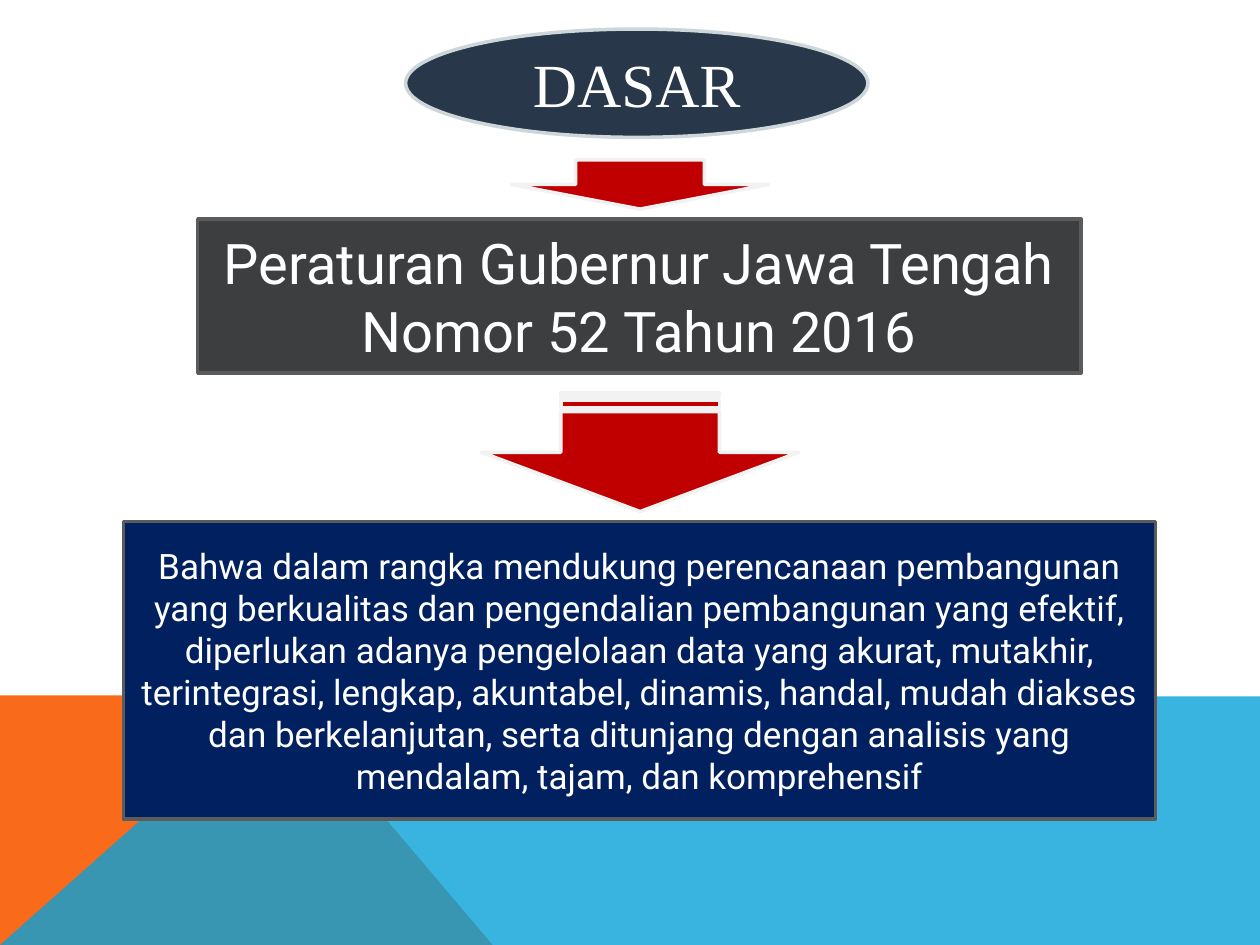
from lxml.etree import SubElement
from pptx import Presentation
from pptx.dml.color import RGBColor
from pptx.enum.shapes import MSO_SHAPE as SHAPE
from pptx.enum.text import MSO_ANCHOR as ANCHOR, PP_ALIGN as ALIGN
from pptx.oxml.ns import qn
from pptx.util import Pt

WIDTH, HEIGHT = 720, 540
RED, PALE, GREY = "C00000", "F2F2F2", "5A5B5D"

# Background bands: corner points, colour, opacity in percent
BANDS = [
    ([(0, 540), (0, 397.4), (160.6, 397.4), (281.5, 540)], "F96A1B", 100),
    ([(0, 540), (160.6, 397.4), (720, 398), (720, 540)], "08A1D9", 80),
]

# Boxes: shape, (left, top, width, height), fill, line, text, text format
BOXES = [
    (SHAPE.RECTANGLE, (113, 125.3, 504.7, 87.8), "3C3E3F", GREY,
     "Peraturan Gubernur Jawa Tengah Nomor 52 Tahun 2016",
     dict(size=32, font="Roboto")),
    (SHAPE.RECTANGLE, (70.6, 298.1, 589.7, 169.9), "002060", GREY,
     "Bahwa dalam rangka mendukung perencanaan pembangunan yang berkualitas "
     "dan pengendalian pembangunan yang efektif, diperlukan adanya pengelolaan "
     "data yang akurat, mutakhir, terintegrasi, lengkap, akuntabel, dinamis, "
     "handal, mudah diakses dan berkelanjutan, serta ditunjang dengan analisis "
     "yang mendalam, tajam, dan komprehensif",
     dict(size=20, font="Roboto")),
    (SHAPE.OVAL, (231.8, 16.6, 264.2, 61.9), "28374A", "CDD7D9",
     "DASAR", dict(size=35, font="Times New Roman")),
]

# Arrows: shape, (left, top, width, height), rotation
ARROWS = [
    (SHAPE.STRIPED_RIGHT_ARROW, (331.9, 167.8, 67.7, 181.4), 90),
    (SHAPE.DOWN_ARROW, (292.3, 91.4, 146.9, 28.1), 0),
]


def rgb(code):
    return RGBColor.from_string(code)


def paint(sp, fill, line=None):
    sp.shadow.inherit = False
    sp.fill.solid()
    sp.fill.fore_color.rgb = rgb(fill)
    if line:
        sp.line.color.rgb = rgb(line)
        sp.line.width = Pt(2)
    else:
        sp.line.fill.background()


def write(sp, text, size, font, color="FFFFFF"):
    tf = sp.text_frame
    tf.word_wrap = True
    tf.vertical_anchor = ANCHOR.MIDDLE
    p = tf.paragraphs[0]
    p.alignment = ALIGN.CENTER
    r = p.add_run()
    r.text = text
    r.font.size = Pt(size)
    r.font.name = font
    r.font.color.rgb = rgb(color)


def add_shape(slide, kind, place, fill, line):
    sp = slide.shapes.add_shape(kind, *map(Pt, place))
    paint(sp, fill, line)
    return sp


def add_band(slide, points, fill, opacity):
    start, *rest = [(Pt(x), Pt(y)) for x, y in points]
    builder = slide.shapes.build_freeform(*start)
    builder.add_line_segments(rest, close=True)
    sp = builder.convert_to_shape()
    paint(sp, fill)
    if opacity < 100:
        color = sp.fill._xPr.find(qn("a:solidFill"))[0]
        SubElement(color, qn("a:alpha"), val=str(opacity * 1000))


def main():
    prs = Presentation()
    prs.slide_width, prs.slide_height = Pt(WIDTH), Pt(HEIGHT)
    slide = prs.slides.add_slide(prs.slide_layouts[6])

    for band in BANDS:
        add_band(slide, *band)

    for kind, place, fill, line, text, style in BOXES:
        write(add_shape(slide, kind, place, fill, line), text, **style)

    for kind, place, rotation in ARROWS:
        add_shape(slide, kind, place, RED, PALE).rotation = rotation

    prs.save("out.pptx")


if __name__ == "__main__":
    main()
